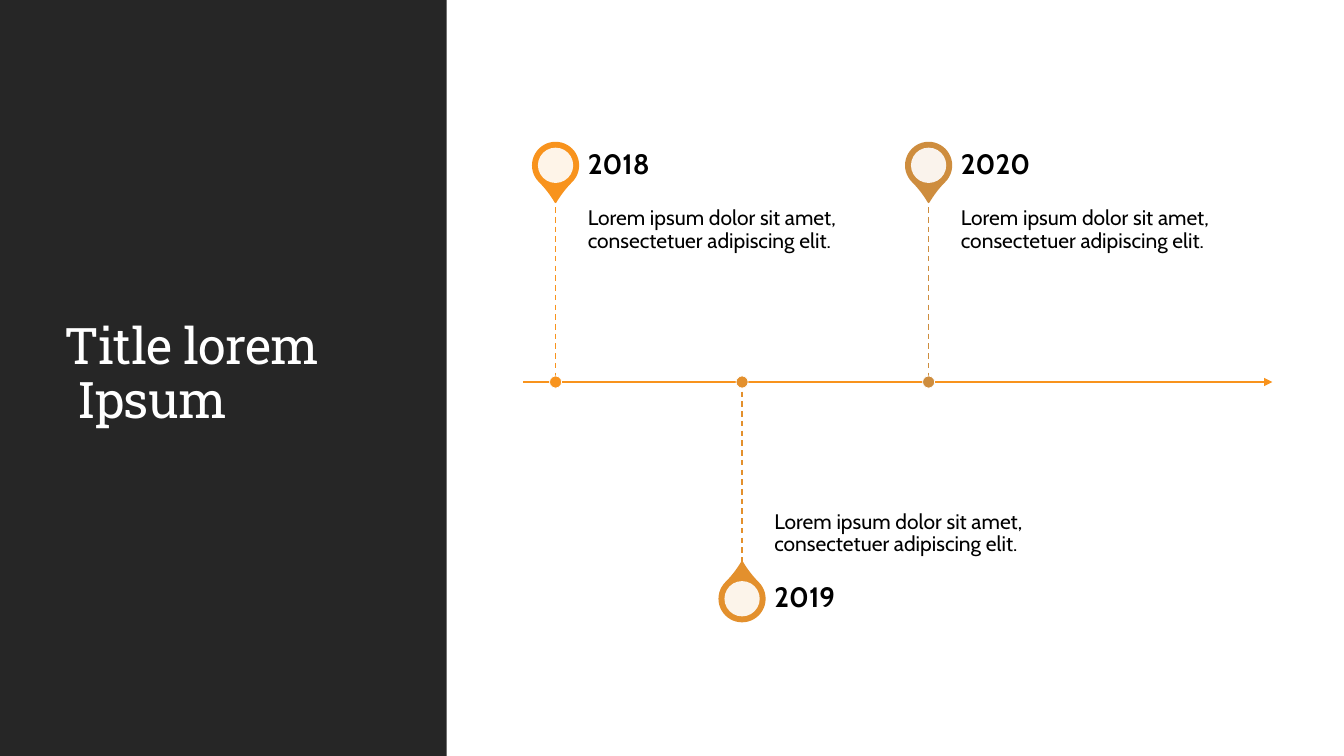
import pptx
import pptx.util
import pptx.dml.color
import pptx.enum.dml
import pptx.enum.shapes
import pptx.enum.text
import pptx.oxml
import pptx.oxml.ns

Inches, Pt = pptx.util.Inches, pptx.util.Pt
RGBColor = pptx.dml.color.RGBColor
SHAPE = pptx.enum.shapes.MSO_SHAPE
ANCHOR = pptx.enum.text.MSO_ANCHOR
LEFT = pptx.enum.text.PP_ALIGN.LEFT

WHITE = RGBColor(0xFF, 0xFF, 0xFF)
BLACK = RGBColor(0, 0, 0)
DARK = RGBColor(0x26, 0x26, 0x26)
ORANGE = RGBColor(0xF8, 0x93, 0x1D)
AMBER = RGBColor(0xE3, 0x90, 0x2D)
BRONZE = RGBColor(0xCE, 0x8D, 0x3E)

SLIDE_W, SLIDE_H = 13.33, 7.5
COL = 1.85              # distance between milestones
STEM, LABEL = 1.83, 0.64  # row heights on each side of the axis
TEXT_W = 3.08

DETAIL = "Lorem ipsum dolor sit amet, consectetuer adipiscing elit."
MILESTONES = [("2018", ORANGE), ("2019", AMBER), ("2020", BRONZE)]


def add_xml(parent, tag, **attrs):
    el = pptx.oxml.parse_xml(f"<a:{tag} {pptx.oxml.ns.nsdecls('a')}/>")
    for name, value in attrs.items():
        el.set(name, value)
    parent.append(el)


def add_filled(slide, kind, x, y, w, h, fill, line=None, line_w=0):
    sp = slide.shapes.add_shape(kind, Inches(x), Inches(y), Inches(w), Inches(h))
    sp.shadow.inherit = False
    sp.fill.solid()
    sp.fill.fore_color.rgb = fill
    if line is None:
        sp.line.fill.background()
    else:
        sp.line.color.rgb = line
        sp.line.width = Pt(line_w)
    return sp


def add_centred(slide, kind, cx, cy, size, fill, line=None, line_w=0):
    return add_filled(slide, kind, cx - size / 2, cy - size / 2, size, size,
                      fill, line, line_w)


def add_line(slide, x1, y1, x2, y2, color, width):
    cn = slide.shapes.add_connector(pptx.enum.shapes.MSO_CONNECTOR.STRAIGHT,
                                    Inches(x1), Inches(y1), Inches(x2), Inches(y2))
    cn.line.color.rgb = color
    cn.line.width = Pt(width)
    add_xml(cn._element.spPr, "effectLst")
    return cn


def format_text(sp, text, font, size, color, anchor, bold=False):
    tf = sp.text_frame
    tf.word_wrap = True
    tf.vertical_anchor = anchor
    tf.text = text
    p = tf.paragraphs[0]
    p.alignment = LEFT
    p.line_spacing = 0.9
    p.font.name, p.font.size, p.font.bold = font, Pt(size), bold
    p.font.color.rgb = color
    return p


def add_text(slide, x, y, h, insets, text, size, anchor, bold=False):
    tb = slide.shapes.add_textbox(Inches(x), Inches(y), Inches(TEXT_W), Inches(h))
    tf = tb.text_frame
    tf.margin_left, tf.margin_top, tf.margin_right, tf.margin_bottom = map(Inches, insets)
    format_text(tb, text, "Cabin", size, BLACK, anchor, bold)


def title_panel(slide, x, y, w, h):
    panel = add_filled(slide, SHAPE.RECTANGLE, x, y, w, h, DARK)
    title = slide.shapes.title
    panel._element.addnext(title._element)  # bring the title in front
    title.left, title.top = Inches(x + 0.54), Inches(y + 0.57)
    title.width, title.height = Inches(3.37), Inches(6.31)
    # Right-to-left paragraph: the closing space indents the last line
    p = format_text(title, "Title lorem Ipsum ", "Roboto Slab", 36, WHITE, ANCHOR.MIDDLE)
    p._p.get_or_add_pPr().set("rtl", "1")
    p.runs[0].font._element.set("spc", "-50")


def milestone(slide, x, axis, up, year, color):
    # Rows run outwards from the axis: stem and detail, then pin and year
    tip = axis - STEM if up else axis + STEM
    pin_y = tip - LABEL / 2 if up else tip + LABEL / 2
    text_x = x + 0.32

    # Pin
    pin = add_centred(slide, SHAPE.TEAR, x, pin_y, 0.45, color, color, 1.25)
    pin.adjustments[0] = 1.15
    pin.rotation = 135 if up else 315
    hole = add_centred(slide, SHAPE.OVAL, x, pin_y, 0.35, WHITE)
    add_xml(hole.fill._xPr.solidFill[0], "alpha", val="90000")

    # Detail and year
    add_text(slide, text_x, min(tip, axis), STEM,
             (0, 0.1, 0.1, 0.16) if up else (0, 0.16, 0, 0.1),
             DETAIL, 15, ANCHOR.TOP if up else ANCHOR.BOTTOM)
    add_text(slide, text_x, pin_y - LABEL / 2, LABEL, (0, 0, 0.14, 0),
             year, 20, ANCHOR.MIDDLE, bold=True)

    # Stem and dot on the axis
    stem = add_line(slide, x, min(tip, axis), x, max(tip, axis), color, 1)
    stem.line.dash_style = pptx.enum.dml.MSO_LINE.DASH
    add_centred(slide, SHAPE.OVAL, x, axis, 0.12, color, WHITE, 0.5)


def timeline(slide, x, y, w):
    axis = y + LABEL + STEM
    arrow = add_line(slide, x, axis, x + w, axis, ORANGE, 1.5)
    add_xml(arrow.line._get_or_add_ln(), "tailEnd", type="triangle")
    for i, (year, color) in enumerate(MILESTONES):
        milestone(slide, x + 0.32 + i * COL, axis, i % 2 == 0, year, color)


def main():
    prs = pptx.Presentation()
    prs.slide_width, prs.slide_height = Inches(SLIDE_W), Inches(SLIDE_H)
    slide = prs.slides.add_slide(prs.slide_layouts[5])
    title_panel(slide, 0, 0, 4.43, SLIDE_H)
    timeline(slide, 5.19, 1.32, 7.43)
    prs.save("out.pptx")


if __name__ == "__main__":
    main()
